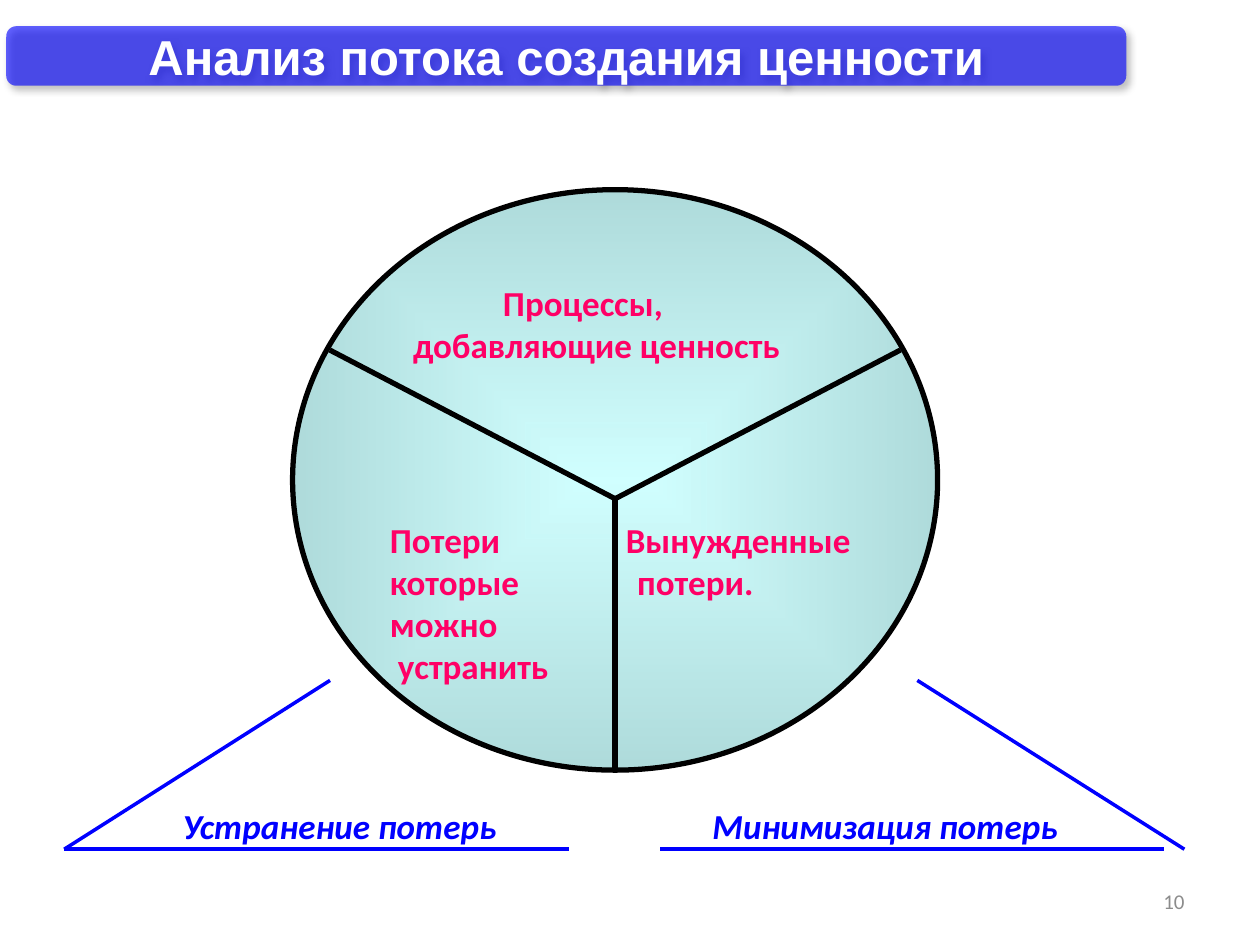
from lxml import etree
from pptx import Presentation
from pptx.dml.color import RGBColor
from pptx.enum.shapes import MSO_CONNECTOR, MSO_SHAPE
from pptx.enum.text import MSO_ANCHOR, PP_ALIGN
from pptx.oxml import parse_xml
from pptx.oxml.ns import nsdecls, qn
from pptx.util import Pt

BLACK = RGBColor(0x00, 0x00, 0x00)
BLUE = RGBColor(0x00, 0x00, 0xFF)
PINK = RGBColor(0xFF, 0x00, 0x66)
GREY = RGBColor(0x8C, 0x8C, 0x8C)
WHITE = RGBColor(0xFF, 0xFF, 0xFF)

prs = Presentation()
prs.slide_width, prs.slide_height = Pt(720), Pt(540)
s = prs.slides.add_slide(prs.slide_layouts[6])


def add_line(shapes, start, end, color, width):
    line = shapes.add_connector(
        MSO_CONNECTOR.STRAIGHT, *[Pt(v) for v in (*start, *end)])
    line.line.color.rgb = color
    line.line.width = Pt(width)
    etree.SubElement(line._element.spPr, qn("a:effectLst"))


def set_text(sp, lines, size, color, align=PP_ALIGN.LEFT, font="Calibri",
             bold=True, italic=False, wrap=False, anchor=MSO_ANCHOR.MIDDLE):
    tf = sp.text_frame
    tf.text = "\n".join(lines)
    tf.word_wrap = wrap
    tf.vertical_anchor = anchor
    for p in tf.paragraphs:
        p.alignment = align
        for r in p.runs:
            r.font.name, r.font.size = font, Pt(size)
            r.font.bold, r.font.italic = bold, italic
            r.font.color.rgb = color


# Title bar: translucent fill with a soft shadow
title = s.shapes.add_shape(
    MSO_SHAPE.ROUNDED_RECTANGLE, Pt(3.6), Pt(15), Pt(640), Pt(34))
title.shadow.inherit = False
title.fill.solid()
title.fill.fore_color.rgb = BLUE
fill_color = title._element.spPr.find(qn("a:solidFill"))[0]
etree.SubElement(fill_color, qn("a:alpha"), val="62000")
title.line.fill.background()
title._element.spPr.find(qn("a:effectLst")).append(parse_xml(
    f'<a:outerShdw {nsdecls("a")} blurRad="50800" dist="38100" dir="2700000">'
    '<a:srgbClr val="000000"><a:alpha val="40000"/></a:srgbClr></a:outerShdw>'))
set_text(title, ["Анализ потока создания ценности"], 28, WHITE,
         PP_ALIGN.CENTER, font="Arial", wrap=True)

# Circle divided into three sectors
diagram = s.shapes.add_group_shape()
circle = diagram.shapes.add_shape(
    MSO_SHAPE.OVAL, Pt(167.2), Pt(108.4), Pt(368.6), Pt(331.7))
circle.shadow.inherit = False
circle.line.color.rgb = BLACK
circle.line.width = Pt(3)
circle._element.spPr.find(qn("a:prstGeom")).addnext(parse_xml(
    f'<a:gradFill {nsdecls("a")} rotWithShape="1"><a:gsLst>'
    '<a:gs pos="0"><a:srgbClr val="CCFFFF"><a:alpha val="90000"/></a:srgbClr></a:gs>'
    '<a:gs pos="100000"><a:srgbClr val="AEDADA"/></a:gs></a:gsLst>'
    '<a:path path="shape"><a:fillToRect l="50000" t="50000" r="50000" b="50000"/>'
    '</a:path></a:gradFill>'))
hub = (351.5, 285)
for rim in ((351.5, 440), (188.4, 200), (514.6, 200)):
    add_line(diagram.shapes, hub, rim, BLACK, 3)

# Sector labels: left, top, width, lines as (text, indent)
sectors = [
    (236, 161, 214, [("Процессы,", 51.4), ("добавляющие ценность", 0)]),
    (222.8, 296.4, 110, [("Потери", 0), ("которые", 0), ("можно", 0),
                         ("устранить", 4.6)]),
    (357.6, 296.4, 134, [("Вынужденные", 0), ("потери.", 6.5)]),
]
for left, top, width, lines in sectors:
    box = s.shapes.add_textbox(Pt(left), Pt(top), Pt(width), Pt(24.4 * len(lines)))
    tf = box.text_frame
    tf.margin_left = tf.margin_right = tf.margin_top = tf.margin_bottom = 0
    set_text(box, [text for text, _ in lines], 20, PINK, anchor=MSO_ANCHOR.TOP)
    for p, (_, indent) in zip(tf.paragraphs, lines):
        p._p.get_or_add_pPr().set("marL", str(Pt(indent)))

# Actions below the circle
for start, end in [((188.6, 388.8), (36.7, 485.3)), ((36.7, 485.3), (325.4, 485.3)),
                   ((377.3, 485.3), (665.3, 485.3)), ((676.8, 485.3), (524.2, 388.8))]:
    add_line(s.shapes, start, end, BLUE, 2)
for left, text in ((70.6, "Устранение потерь"), (382.3, "Минимизация потерь")):
    box = s.shapes.add_textbox(Pt(left), Pt(458.6), Pt(247), Pt(26.6))
    set_text(box, [text], 20, BLUE, PP_ALIGN.CENTER, italic=True)

number = s.shapes.add_textbox(Pt(516), Pt(500.5), Pt(168), Pt(28.8))
set_text(number, ["10"], 12, GREY, PP_ALIGN.RIGHT, bold=False, wrap=True)

prs.save("out.pptx")
